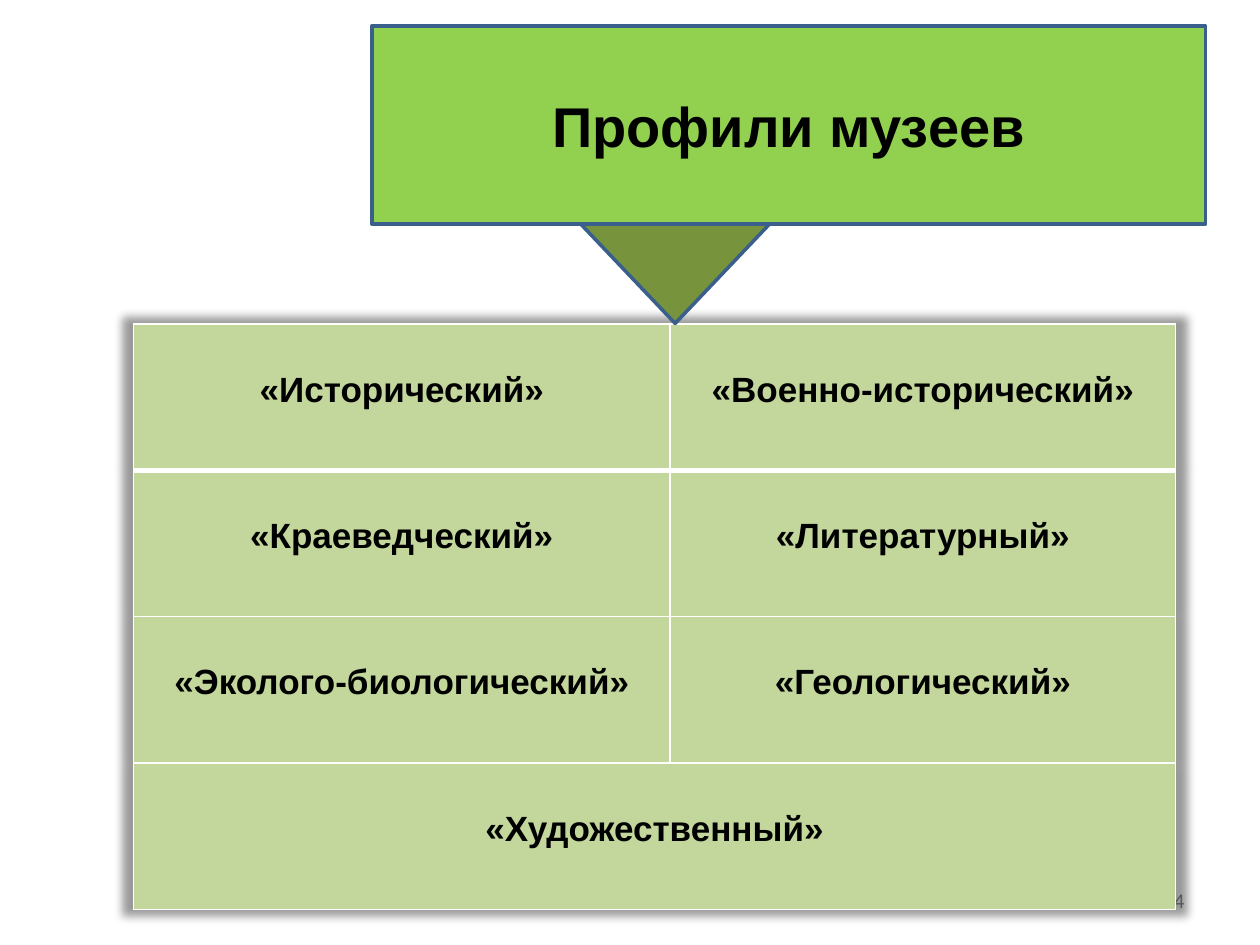
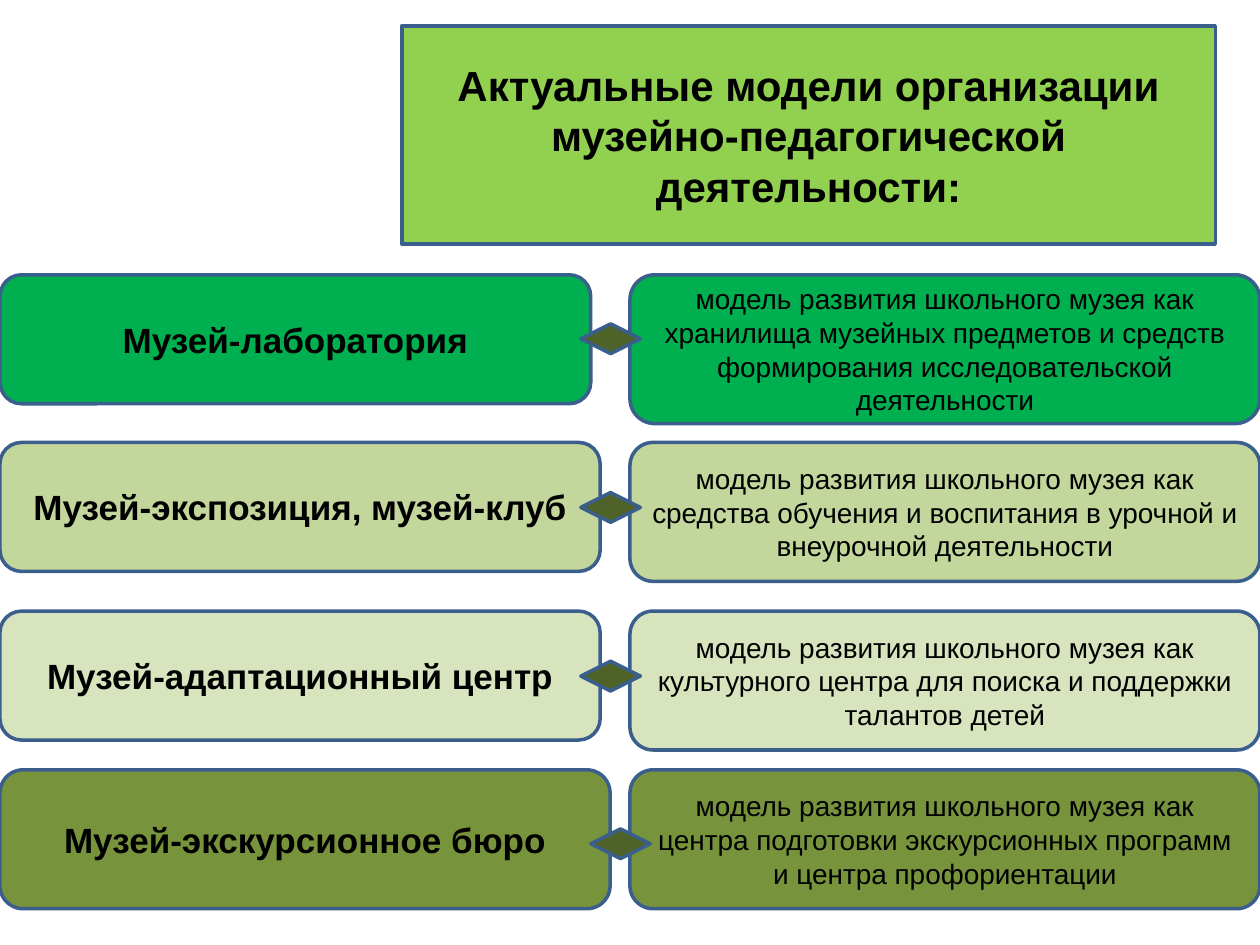
from dataclasses import dataclass

from lxml import etree
from pptx import Presentation
from pptx.dml.color import RGBColor
from pptx.enum.shapes import MSO_SHAPE
from pptx.enum.text import MSO_ANCHOR, MSO_AUTO_SIZE, PP_ALIGN
from pptx.oxml import parse_xml
from pptx.oxml.ns import nsdecls, qn
from pptx.shapes.autoshape import Shape
from pptx.slide import Slide
from pptx.table import _Cell
from pptx.text.text import TextFrame
from pptx.util import Cm, Pt

CARD = MSO_SHAPE.FLOWCHART_ALTERNATE_PROCESS
DIAMOND = MSO_SHAPE.FLOWCHART_DECISION
TRIANGLE = MSO_SHAPE.ISOSCELES_TRIANGLE
CENTER, RIGHT = PP_ALIGN.CENTER, PP_ALIGN.RIGHT
TOP, MIDDLE = MSO_ANCHOR.TOP, MSO_ANCHOR.MIDDLE
NO_AUTOFIT = MSO_AUTO_SIZE.NONE

BLACK = RGBColor(0x00, 0x00, 0x00)
WHITE = RGBColor(0xFF, 0xFF, 0xFF)
GREY = RGBColor(0x8C, 0x8C, 0x8C)
OUTLINE = RGBColor(0x3A, 0x5F, 0x8C)
LIME = RGBColor(0x92, 0xD0, 0x50)
EMERALD = RGBColor(0x00, 0xB0, 0x50)
SAGE = RGBColor(0xC3, 0xD6, 0x9B)
PALE = RGBColor(0xD7, 0xE4, 0xBD)
OLIVE = RGBColor(0x77, 0x93, 0x3C)
DARK_OLIVE = RGBColor(0x4F, 0x62, 0x28)

TITLE_ONLY = 5
FONT = "Arial"
OUTLINE_WIDTH = Pt(2)


@dataclass(frozen=True)
class Box:
    """Position and size in centimetres."""
    left: float
    top: float
    width: float
    height: float

    def lengths(self) -> tuple[Cm, Cm, Cm, Cm]:
        return Cm(self.left), Cm(self.top), Cm(self.width), Cm(self.height)


@dataclass(frozen=True)
class MuseumModel:
    name: str
    purpose: str
    fill: RGBColor
    name_box: Box
    purpose_height: float
    link_left: float
    link_top: float


PROFILES = [
    ("«Исторический»", "«Военно-исторический»"),
    ("«Краеведческий»", "«Литературный»"),
    ("«Эколого-биологический»", "«Геологический»"),
    ("«Художественный»", ""),
]
PROFILE_WIDTHS = (10.82, 10.19)
PROFILE_HEIGHT = 2.95

PURPOSE_START = "модель развития школьного музея как "
PURPOSE_LEFT, PURPOSE_WIDTH = 12.7, 12.7
LINK_WIDTH, LINK_HEIGHT = 1.2, 0.6
MODELS = [
    MuseumModel("Музей-лаборатория",
                "хранилища музейных предметов и средств формирования "
                "исследовательской деятельности",
                EMERALD, Box(0, 5.54, 11.91, 2.6), 3, 11.71, 6.53),
    MuseumModel("Музей-экспозиция, музей-клуб",
                "средства обучения и воспитания в урочной и внеурочной деятельности",
                SAGE, Box(0, 8.92, 12.1, 2.6), 2.8, 11.71, 9.93),
    MuseumModel("Музей-адаптационный центр",
                "культурного центра для поиска и поддержки талантов детей",
                PALE, Box(0, 12.32, 12.1, 2.6), 2.8, 11.71, 13.33),
    MuseumModel("Музей-экскурсионное бюро",
                "центра подготовки экскурсионных программ и центра профориентации",
                OLIVE, Box(0, 15.52, 12.3, 2.8), 2.8, 11.91, 16.71),
]


# Shared styling
def write(frame: TextFrame, text: str, size: float, bold: bool = False,
          color: RGBColor = BLACK, font: str = FONT,
          align: PP_ALIGN = CENTER) -> None:
    frame.word_wrap = True
    frame.vertical_anchor = MIDDLE
    paragraph = frame.paragraphs[0]
    paragraph.text = text
    paragraph.alignment = align
    paragraph.font.name = font
    paragraph.font.size = Pt(size)
    paragraph.font.bold = bold
    paragraph.font.color.rgb = color


def paint(shape: Shape, fill: RGBColor) -> None:
    shape.fill.solid()
    shape.fill.fore_color.rgb = fill
    shape.line.color.rgb = OUTLINE
    shape.line.width = OUTLINE_WIDTH
    shape.shadow.inherit = False


def add_figure(slide: Slide, kind: MSO_SHAPE, box: Box, fill: RGBColor) -> Shape:
    figure = slide.shapes.add_shape(kind, *box.lengths())
    paint(figure, fill)
    return figure


def set_title(slide: Slide, text: str, size: float, box: Box, outline: str) -> None:
    title = slide.shapes.title
    title.left, title.top, title.width, title.height = box.lengths()
    geometry = parse_xml(f'<a:prstGeom {nsdecls("a")} prst="{outline}"><a:avLst/></a:prstGeom>')
    title.element.spPr.find(qn("a:xfrm")).addnext(geometry)
    paint(title, LIME)
    write(title.text_frame, text, size, bold=True)
    title.text_frame.auto_size = NO_AUTOFIT


# Table details
def set_borders(cell: _Cell, bottom: float) -> None:
    properties = cell._tc.get_or_add_tcPr()
    widths = {"lnL": 1, "lnR": 1, "lnT": 1, "lnB": bottom}
    for index, (side, width) in enumerate(widths.items()):
        border = parse_xml(
            f'<a:{side} {nsdecls("a")} w="{Pt(width)}"><a:solidFill>'
            f'<a:srgbClr val="{WHITE}"/></a:solidFill></a:{side}>')
        properties.insert(index, border)


def add_glow_shadow(table_properties: etree._Element) -> None:
    table_properties.insert(0, parse_xml(
        f'<a:effectLst {nsdecls("a")}><a:outerShdw blurRad="63500" sx="102000" '
        'sy="102000" algn="ctr" rotWithShape="0"><a:srgbClr val="000000">'
        '<a:alpha val="40000"/></a:srgbClr></a:outerShdw></a:effectLst>'))


def add_profile_table(slide: Slide) -> None:
    box = Box(2.69, 6.53, sum(PROFILE_WIDTHS), PROFILE_HEIGHT * len(PROFILES))
    table = slide.shapes.add_table(len(PROFILES), len(PROFILE_WIDTHS), *box.lengths()).table
    table.first_row = table.horz_banding = False
    add_glow_shadow(table._tbl.tblPr)
    for column, width in zip(table.columns, PROFILE_WIDTHS):
        column.width = Cm(width)
    for row_index, profiles in enumerate(PROFILES):
        table.rows[row_index].height = Cm(PROFILE_HEIGHT)
        for column_index, profile in enumerate(profiles):
            cell = table.cell(row_index, column_index)
            cell.fill.solid()
            cell.fill.fore_color.rgb = SAGE
            set_borders(cell, bottom=3 if row_index == 0 else 1)
            if profile:
                write(cell.text_frame, profile, 20, bold=True)
            cell.vertical_anchor = TOP
            cell.margin_top = Cm(0.94)
    last = len(PROFILES) - 1
    table.cell(last, 0).merge(table.cell(last, 1))


# Slides
def build_profiles(slide: Slide) -> None:
    set_title(slide, "Профили музеев", 32, Box(7.5, 0.52, 16.8, 4), "flowChartAlternateProcess")
    page_number = slide.shapes.add_textbox(*Box(18.2, 17.65, 5.93, 1.01).lengths())
    write(page_number.text_frame, "4", 12, color=GREY, font="Calibri", align=RIGHT)
    add_profile_table(slide)
    pointer = add_figure(slide, TRIANGLE, Box(11.71, 4.52, 3.8, 2), OLIVE)
    pointer.rotation = 180


def build_models(slide: Slide) -> None:
    set_title(slide, "Актуальные модели организации музейно-педагогической деятельности:",
              24, Box(8.1, 0.52, 16.4, 4.4), "snip2SameRect")
    for model in MODELS:
        name = add_figure(slide, CARD, model.name_box, model.fill)
        write(name.text_frame, model.name, 20, bold=True)
        purpose_box = Box(PURPOSE_LEFT, model.name_box.top, PURPOSE_WIDTH, model.purpose_height)
        purpose = add_figure(slide, CARD, purpose_box, model.fill)
        write(purpose.text_frame, PURPOSE_START + model.purpose, 16)
        link_box = Box(model.link_left, model.link_top, LINK_WIDTH, LINK_HEIGHT)
        add_figure(slide, DIAMOND, link_box, DARK_OLIVE)


def main() -> None:
    prs = Presentation()
    prs.slide_width, prs.slide_height = Cm(25.4), Cm(19.05)
    for build in (build_profiles, build_models):
        build(prs.slides.add_slide(prs.slide_layouts[TITLE_ONLY]))
    prs.save("out.pptx")


if __name__ == "__main__":
    main()
